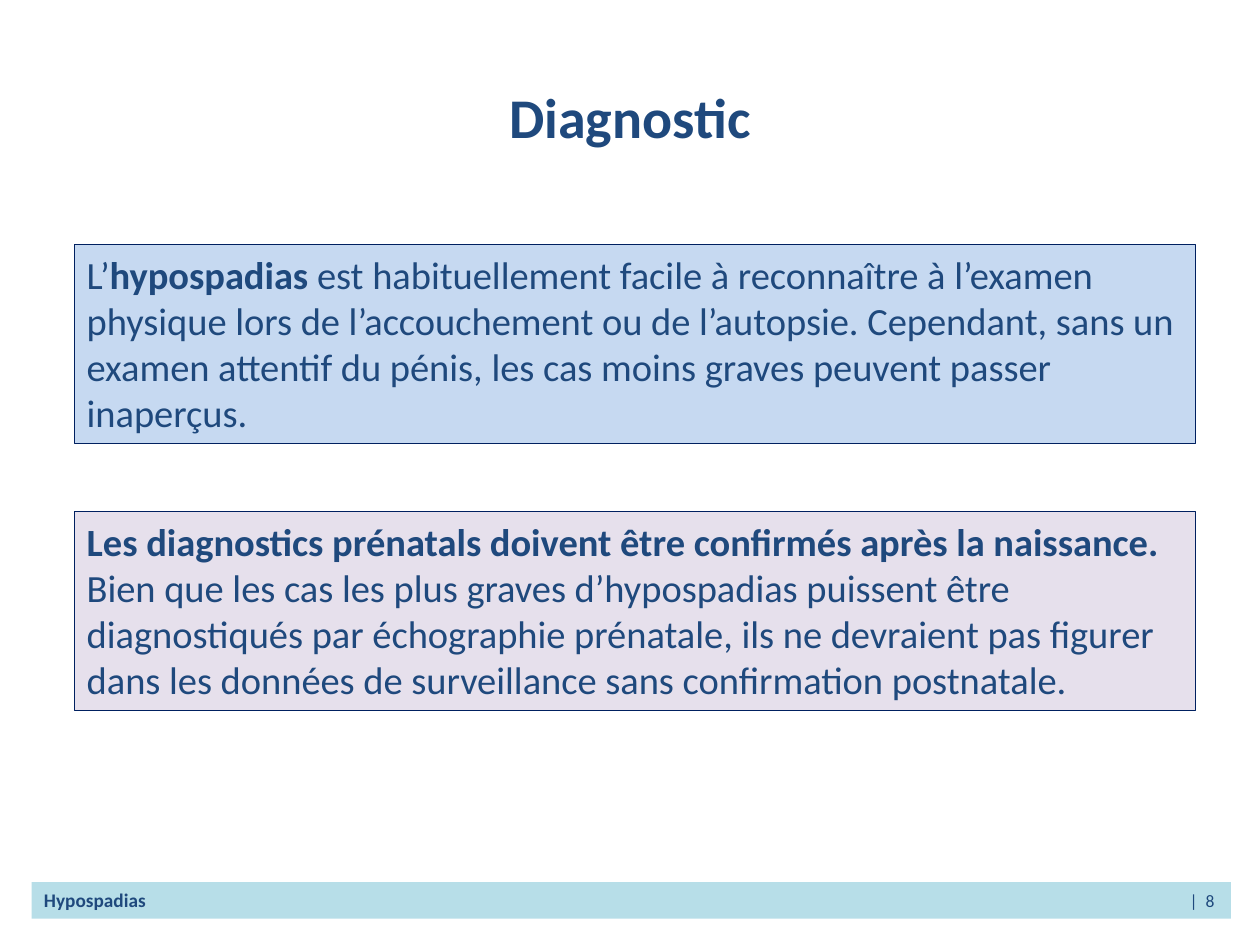
import pptx
import pptx.util
import pptx.dml.color
import pptx.enum.shapes
import pptx.enum.text
import pptx.oxml.ns
from lxml import etree

Inches = pptx.util.Inches
Pt = pptx.util.Pt
ALIGN = pptx.enum.text.PP_ALIGN
ANCHOR = pptx.enum.text.MSO_ANCHOR

COLORS = {
    "text": "1F497D",
    "border": "002060",
    "blue": "C6D9F1",
    "lilac": "E6E0EC",
    "footer": "B7DEE8",
}


def rgb(name):
    return pptx.dml.color.RGBColor.from_string(COLORS[name])


def write_paragraph(p, runs, align=ALIGN.LEFT):
    p.alignment = align
    p.font.name = "Calibri"
    p.font.color.rgb = rgb("text")
    for text, size, bold in runs:
        r = p.add_run()
        r.text = text
        r.font.size = Pt(size)
        r.font.bold = bold


def add_panel(slide, box, fill, paragraphs, border=None):
    sp = slide.shapes.add_shape(
        pptx.enum.shapes.MSO_SHAPE.RECTANGLE, *map(Inches, box))
    sp.shadow.inherit = False
    sp.fill.solid()
    sp.fill.fore_color.rgb = rgb(fill)
    if border:
        sp.line.color.rgb = rgb(border)
        sp.line.width = Pt(0.75)
    else:
        sp.line.fill.background()
    tf = sp.text_frame
    tf.word_wrap = True
    tf.vertical_anchor = ANCHOR.TOP
    for i, runs in enumerate(paragraphs):
        p = tf.add_paragraph() if i else tf.paragraphs[0]
        write_paragraph(p, runs)
    return sp


def add_title(slide, box, text):
    sp = slide.shapes.title
    sp.left, sp.top, sp.width, sp.height = map(Inches, box)
    tf = sp.text_frame
    tf.vertical_anchor = ANCHOR.MIDDLE
    write_paragraph(tf.paragraphs[0], [(text, 32, True)], ALIGN.CENTER)


def add_footer(slide, box, topic, number):
    sp = add_panel(slide, box, "footer",
                   [[(topic + "\t", 11, True), (f"|  {number}", 10, False)]])
    qn = pptx.oxml.ns.qn
    pPr = sp.text_frame.paragraphs[0].runs[0].font._element.getparent().getparent().find(qn("a:pPr"))
    tabs = etree.Element(qn("a:tabLst"))
    etree.SubElement(tabs, qn("a:tab"), pos=str(Inches(box[2] - 0.23)), algn="r")
    pPr.insert(0, tabs)


def main():
    prs = pptx.Presentation()
    prs.slide_width, prs.slide_height = Inches(10), Inches(7.5)
    slide = prs.slides.add_slide(prs.slide_layouts[5])

    add_footer(slide, (0.25, 7, 9.52, 0.29), "Hypospadias", 8)
    add_title(slide, (0.5, 0.3, 9, 1.25), "Diagnostic")

    recognition = [[
        ("L’", 22, False),
        ("hypospadias", 22, True),
        (" est habituellement facile à reconnaître à l’examen physique lors "
         "de l’accouchement ou de l’autopsie. Cependant, sans un examen "
         "attentif du pénis, les cas moins graves peuvent passer inaperçus.",
         22, False),
    ]]
    confirmation = [
        [("Les diagnostics prénatals doivent être confirmés après la "
          "naissance.", 22, True)],
        [("Bien que les cas les plus graves d’hypospadias puissent être "
          "diagnostiqués par échographie prénatale, ils ne devraient pas "
          "figurer dans les données de surveillance sans confirmation "
          "postnatale.", 22, False)],
    ]
    panels = [(1.94, "blue", recognition), (4.06, "lilac", confirmation)]
    for top, fill, paragraphs in panels:
        add_panel(slide, (0.59, top, 8.9, 1.58), fill, paragraphs, "border")

    prs.save("out.pptx")


if __name__ == "__main__":
    main()
